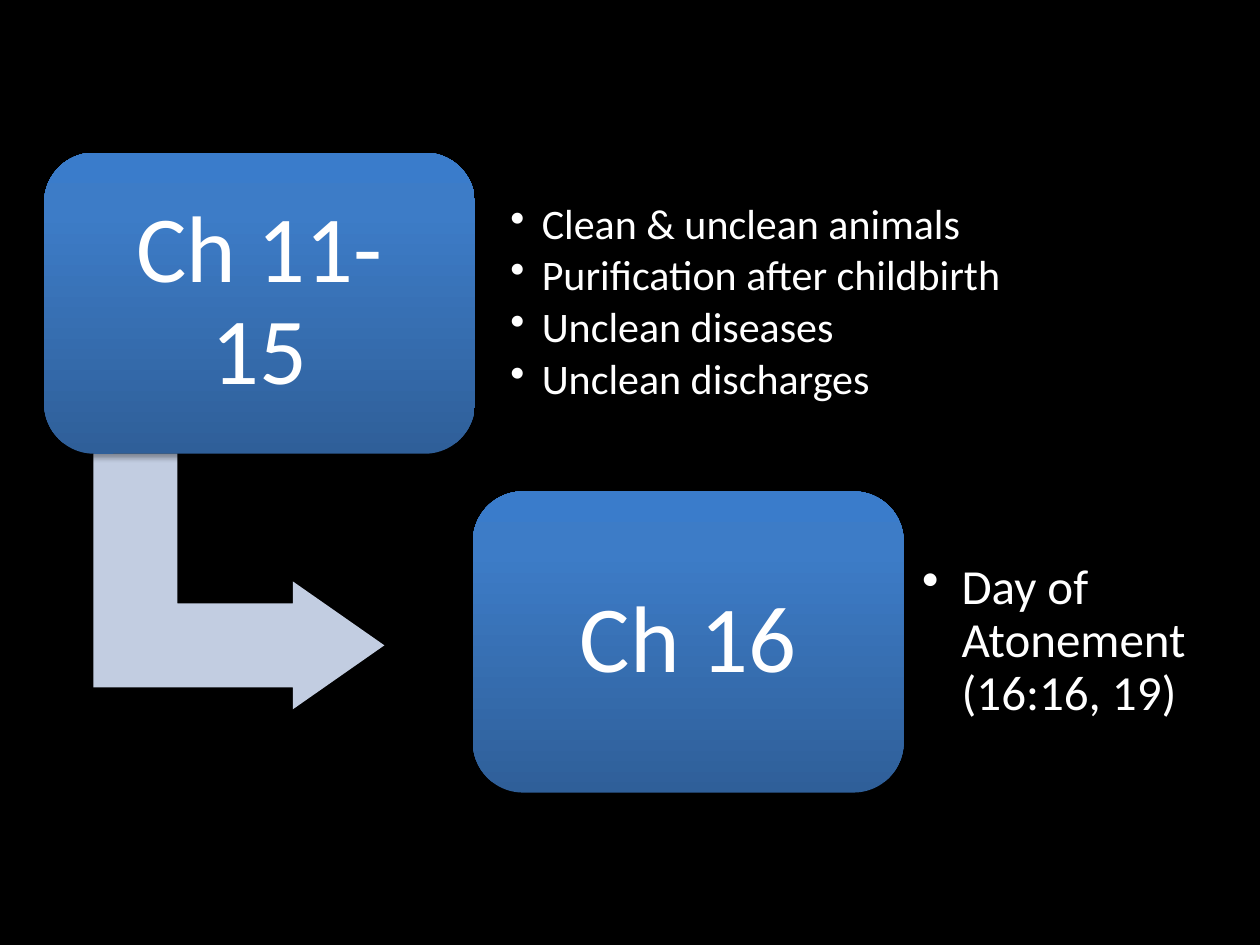
from lxml.etree import SubElement
from pptx import Presentation
from pptx.dml.color import RGBColor
from pptx.enum.shapes import MSO_SHAPE
from pptx.enum.text import MSO_ANCHOR, PP_ALIGN
from pptx.oxml.ns import qn
from pptx.util import Pt

STEPS = [
    {
        "heading": "Ch 11-15",
        "points": [
            "Clean & unclean animals",
            "Purification after childbirth",
            "Unclean diseases",
            "Unclean discharges",
        ],
        "list": {"left": 282.2, "width": 350, "size": 24, "inset": 9.4, "indent": 18},
    },
    {
        "heading": "Ch 16",
        "points": ["Day of Atonement (16:16, 19)"],
        "list": {"left": 516.2, "width": 179.3, "size": 28, "inset": 10.8, "indent": 22.5},
    },
]

THEME = {
    "background": "000000",
    "text": "FFFFFF",
    "arrow": "C2CDE1",
    "gradient": [(0, "2F5F99"), (80, "3D7CC7"), (100, "3A7CCB")],
    "shadow": "000000",
    "font": "Calibri",
    "heading_size": 54,
}

SLIDE_SIZE = (720, 540)
FIRST_BOX = (25.2, 87.2)
BOX_STEP = (245, 193.6)
BOX_SIZE = (246.2, 172.1)
LIST_HEIGHT = 139
HEADING_INSET = 24.5
ARROW = (63.4, 249.1, 146.2, 166.3)
ARROW_ADJUSTMENTS = (0.328, 0.25, 0.358)


def color(name):
    return RGBColor.from_string(THEME[name])


def apply(target, values):
    for name, value in values.items():
        setattr(target, name, value)


def add_child(parent, tag, **attributes):
    values = {name: str(value) for name, value in attributes.items()}
    return SubElement(parent, qn(tag), values)


def add_color(parent, value, opacity=100):
    shade = add_child(parent, "a:srgbClr", val=value)
    if opacity < 100:
        add_child(shade, "a:alpha", val=opacity * 1000)


def add_shadow(shape):
    shape.shadow.inherit = False
    effects = shape.element.spPr.find(qn("a:effectLst"))
    shadow = add_child(effects, "a:outerShdw", blurRad=Pt(3.1), dist=Pt(1.8),
                       dir=5400000, rotWithShape=0)
    add_color(shadow, THEME["shadow"], 35)


def add_shape(page, kind, bounds):
    shape = page.shapes.add_shape(kind, *map(Pt, bounds))
    shape.line.fill.background()
    add_shadow(shape)
    return shape


def fill_gradient(shape):
    shape.fill.gradient()
    shape.fill.gradient_angle = 90
    stops = shape.element.spPr.find(qn("a:gradFill")).find(qn("a:gsLst"))
    stops.clear()
    for position, value in THEME["gradient"]:
        add_color(add_child(stops, "a:gs", pos=position * 1000), value)


def format_frame(frame, inset):
    margins = {f"margin_{side}": Pt(inset) for side in ("left", "right", "top", "bottom")}
    apply(frame, {"word_wrap": True, "vertical_anchor": MSO_ANCHOR.MIDDLE, **margins})


def write(para, text, size, space_after, **values):
    apply(para, {"line_spacing": 0.9, **values})
    spacing = add_child(para._p.get_or_add_pPr(), "a:spcAft")
    add_child(spacing, "a:spcPct", val=space_after * 1000)
    span = para.add_run()
    span.text = text
    apply(span.font, {"name": THEME["font"], "size": Pt(size)})
    span.font.color.rgb = color("text")


def add_bullet(para, indent):
    properties = para._p.get_or_add_pPr()
    properties.set("marL", str(Pt(indent)))
    properties.set("indent", str(-Pt(indent)))
    add_child(properties, "a:buChar", char="•")


def add_arrow(page):
    arrow = add_shape(page, MSO_SHAPE.BENT_UP_ARROW, ARROW)
    arrow.rotation = 90
    for index, value in enumerate(ARROW_ADJUSTMENTS):
        arrow.adjustments[index] = value
    arrow.fill.solid()
    arrow.fill.fore_color.rgb = color("arrow")


def add_heading(page, text, left, top):
    box = add_shape(page, MSO_SHAPE.ROUNDED_RECTANGLE, (left, top, *BOX_SIZE))
    fill_gradient(box)
    format_frame(box.text_frame, HEADING_INSET)
    write(box.text_frame.paragraphs[0], text, THEME["heading_size"], 35,
          alignment=PP_ALIGN.CENTER)


def add_list(page, points, style, box_top):
    top = box_top + (BOX_SIZE[1] - LIST_HEIGHT) / 2
    bounds = (style["left"], top, style["width"], LIST_HEIGHT)
    frame = page.shapes.add_textbox(*map(Pt, bounds)).text_frame
    format_frame(frame, style["inset"])
    for index, text in enumerate(points):
        para = frame.add_paragraph() if index else frame.paragraphs[0]
        write(para, text, style["size"], 15, level=1, alignment=PP_ALIGN.LEFT)
        add_bullet(para, style["indent"])


def main():
    deck = Presentation()
    deck.slide_width, deck.slide_height = map(Pt, SLIDE_SIZE)
    page = deck.slides.add_slide(deck.slide_layouts[6])
    page.background.fill.solid()
    page.background.fill.fore_color.rgb = color("background")
    add_arrow(page)
    for index, step in enumerate(STEPS):
        left, top = (start + index * gap for start, gap in zip(FIRST_BOX, BOX_STEP))
        add_heading(page, step["heading"], left, top)
        add_list(page, step["points"], step["list"], top)
    deck.save("out.pptx")


if __name__ == "__main__":
    main()
